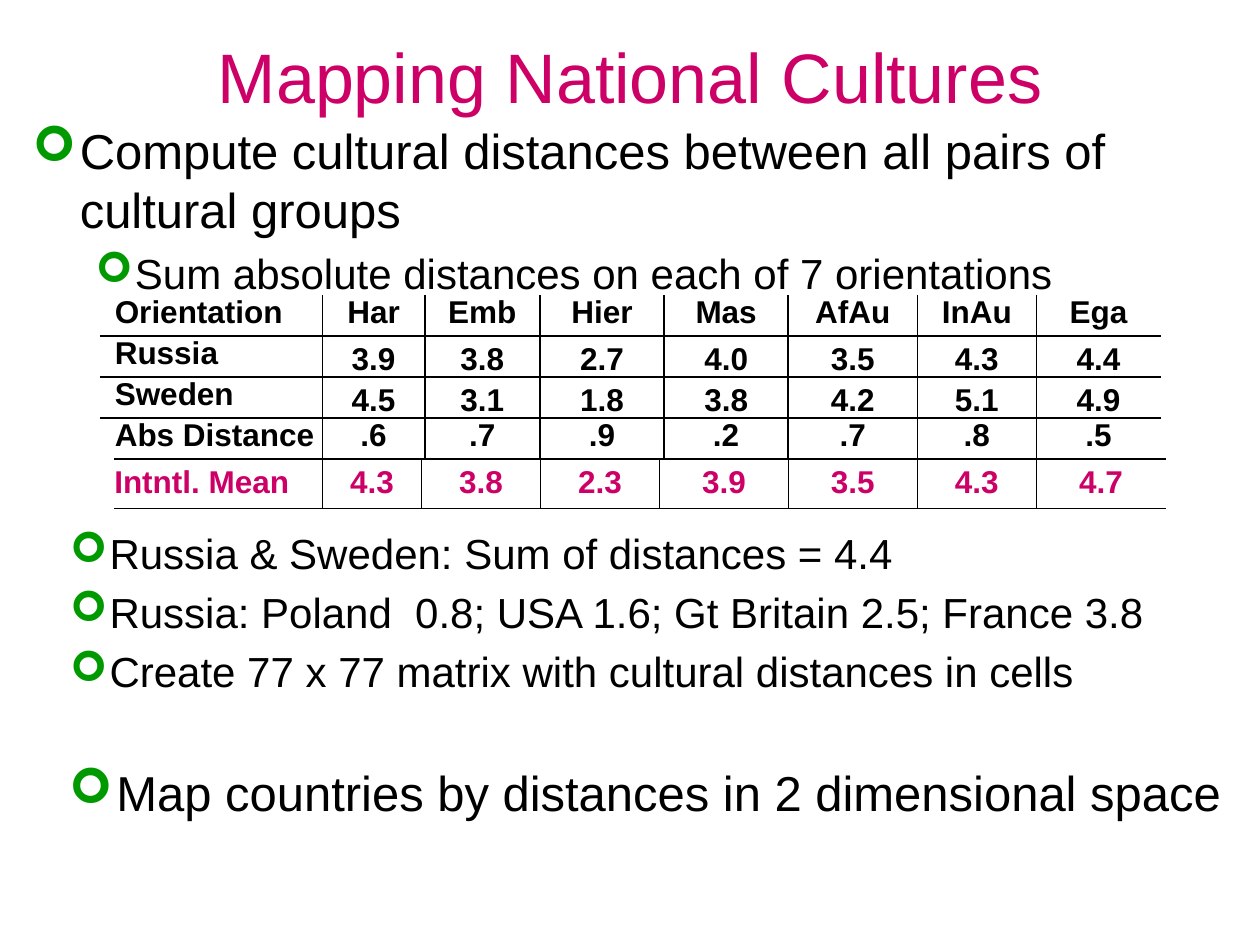
from lxml import etree
from pptx import Presentation
from pptx.dml.color import RGBColor
from pptx.enum.text import MSO_ANCHOR, PP_ALIGN
from pptx.oxml.ns import qn
from pptx.util import Pt

LEFT, CENTER = PP_ALIGN.LEFT, PP_ALIGN.CENTER
TOP, MIDDLE, BOTTOM = MSO_ANCHOR.TOP, MSO_ANCHOR.MIDDLE, MSO_ANCHOR.BOTTOM
HUES = {"title": "CC0066", "text": "000000", "mark": "009900"}
MAIN = {"size": 28, "inset": 27, "hang": 27}
SUB = {"size": 24, "inset": 58.5, "hang": 22.5}


def bullet(para, inset, hang):
    props = para._p.get_or_add_pPr()
    props.set("marL", str(Pt(inset)))
    props.set("indent", str(-Pt(hang)))
    tint = etree.SubElement(props, qn("a:buClr"))
    etree.SubElement(tint, qn("a:srgbClr")).set("val", HUES["mark"])
    etree.SubElement(props, qn("a:buFont")).set("typeface", "Wingdings")
    etree.SubElement(props, qn("a:buChar")).set("char", "➢")


def write(frame, text, size=18, hue="text", bold=False, align=LEFT,
          gap=0, inset=0, hang=0):
    para = frame.paragraphs[0]
    if para.runs:
        para = frame.add_paragraph()
    para.alignment = align
    if gap:
        para.space_before = Pt(gap)
    if hang:
        bullet(para, inset, hang)
    run = para.add_run()
    run.text = text
    font = run.font
    font.name, font.size, font.bold = "Arial", Pt(size), bold
    font.color.rgb = RGBColor.from_string(HUES[hue])


def panel(slide, box, anchor=TOP):
    frame = slide.shapes.add_textbox(*map(Pt, box)).text_frame
    frame.word_wrap = True
    frame.vertical_anchor = anchor
    return frame


def title(slide, box):
    frame = panel(slide, box, MIDDLE)
    write(frame, "Mapping National Cultures", size=40, hue="title", align=CENTER)


def intro(slide, box):
    frame = panel(slide, box)
    write(frame, "Compute cultural distances between all pairs of cultural groups", **MAIN)
    write(frame, "Sum absolute distances on each of 7 orientations", gap=5, **SUB)


def results(slide, box):
    frame = panel(slide, box)
    lines = ["Russia & Sweden: Sum of distances = 4.4",
             "Russia: Poland  0.8; USA 1.6; Gt Britain 2.5; France 3.8",
             "Create 77 x 77 matrix with cultural distances in cells"]
    for index, line in enumerate(lines):
        write(frame, line, gap=5 if index else 0, **SUB)
    write(frame, "Map countries by distances in 2 dimensional space",
          align=CENTER, gap=38, **MAIN)


def border(cell, sides):
    props = cell._tc.get_or_add_tcPr()
    for index, (side, shown) in enumerate(sides.items()):
        line = etree.Element(qn("a:ln" + side), w=str(Pt(1)))
        if shown:
            fill = etree.SubElement(line, qn("a:solidFill"))
            etree.SubElement(fill, qn("a:srgbClr")).set("val", HUES["text"])
        else:
            etree.SubElement(line, qn("a:noFill"))
        props.insert(index, line)


def grid(slide, box, rows, cols, hue="text", pad=(3.6, 0), lead=0,
         low=(), ends=False):
    table = slide.shapes.add_table(len(rows), len(cols), *map(Pt, box)).table
    table.first_row = table.horz_banding = False
    for col, width in zip(table.columns, cols):
        col.width = Pt(width)
    for r, row in enumerate(rows):
        table.rows[r].height = Pt(box[3] / len(rows))
        for c, text in enumerate(row):
            cell = table.cell(r, c)
            cell.margin_left = Pt(pad[0] + (0 if c else lead))
            cell.margin_right = Pt(pad[0])
            cell.margin_top = cell.margin_bottom = Pt(pad[1])
            cell.vertical_anchor = BOTTOM if c and r in low else TOP
            cell.fill.background()
            border(cell, {"L": c > 0, "R": c < len(row) - 1,
                          "T": ends or r > 0, "B": ends or r < len(rows) - 1})
            write(cell.text_frame, text, hue=hue, bold=True,
                  align=CENTER if c else LEFT)


def means(slide, box):
    rows = ["Intntl. Mean|4.3|3.8|2.3|3.9|3.5|4.3|4.7".split("|")]
    cols = [119, 56.6, 68, 68, 73.7, 73.7, 68, 74]
    grid(slide, box, rows, cols, hue="title", pad=(0, 3.3), ends=True)


def scores(slide, box):
    rows = [line.split("|") for line in (
        "Orientation|Har|Emb|Hier|Mas|AfAu|InAu|Ega",
        "Russia|3.9|3.8|2.7|4.0|3.5|4.3|4.4",
        "Sweden|4.5|3.1|1.8|3.8|4.2|5.1|4.9",
        "Abs Distance|.6|.7|.9|.2|.7|.8|.5")]
    cols = [127.2, 58.6, 65.7, 71, 71, 73.8, 68, 71]
    grid(slide, box, rows, cols, lead=5, low=(1, 2))


def main():
    deck = Presentation()
    deck.slide_width, deck.slide_height = Pt(720), Pt(540)
    slide = deck.slides.add_slide(deck.slide_layouts[6])
    title(slide, (36, -2, 648, 90))
    intro(slide, (11.5, 65.5, 666, 130))
    results(slide, (-3, 298, 743, 210))
    means(slide, (65.3, 262.4, 601, 27.3))
    scores(slide, (57, 168.5, 606.3, 94))
    deck.save("out.pptx")


if __name__ == "__main__":
    main()
